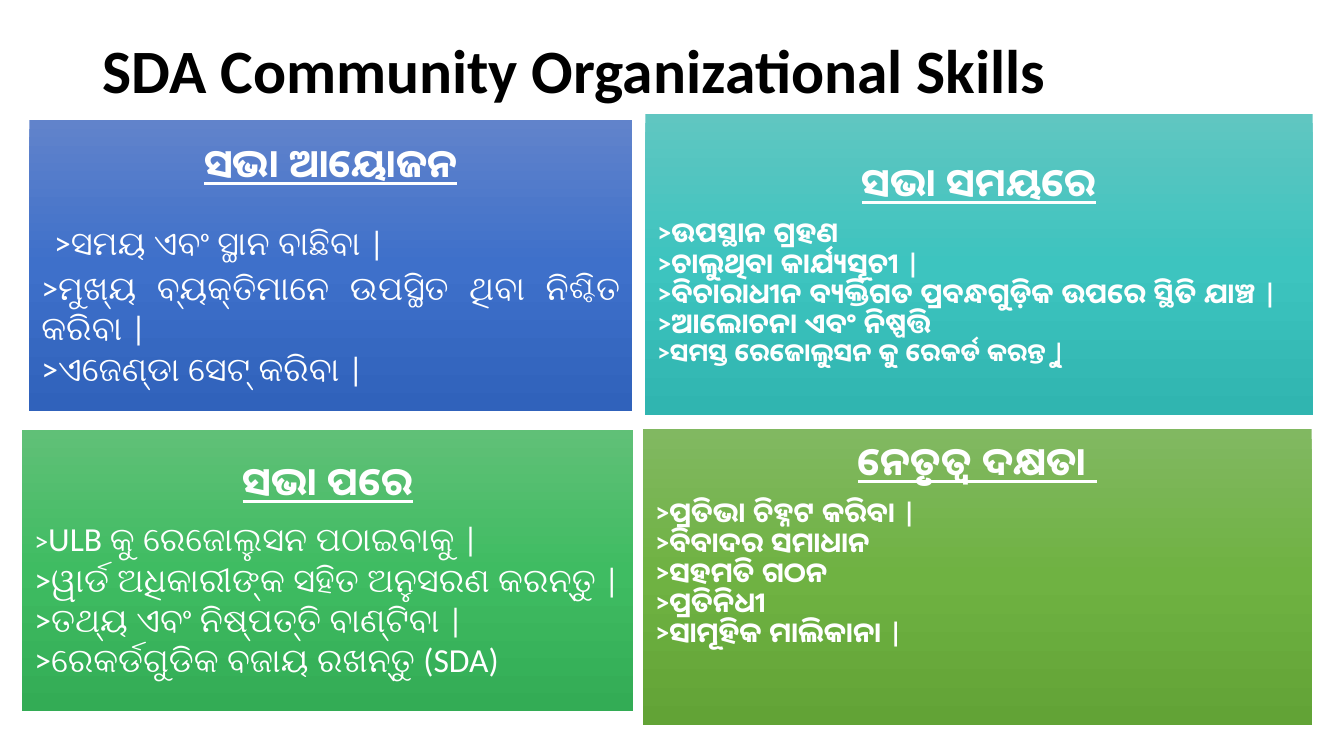
import copy

import pptx
import pptx.dml.color
import pptx.enum.shapes
import pptx.enum.text
import pptx.util

Inches = pptx.util.Inches
Pt = pptx.util.Pt
ALIGN = pptx.enum.text.PP_ALIGN
ANCHOR = pptx.enum.text.MSO_ANCHOR


def rgb(hex_colour):
    return pptx.dml.color.RGBColor.from_string(hex_colour)


def add_text(paragraph, text, size=24, colour="FFFFFF", bold=False, underline=False,
             align=ALIGN.LEFT, spacing=1.0, after=0):
    """Append a formatted run and set the format of its paragraph."""
    paragraph.alignment = align
    paragraph.line_spacing = spacing
    paragraph.space_before = Pt(0)
    paragraph.space_after = Pt(after)
    run = paragraph.add_run()
    run.text = text
    run.font.name = "Calibri"
    run.font.size = Pt(size)
    run.font.bold = bold
    run.font.underline = underline
    run.font.color.rgb = rgb(colour)


deck = pptx.Presentation()
deck.slide_width, deck.slide_height = Inches(13.33), Inches(7.5)
slide = deck.slides.add_slide(deck.slide_layouts[5])

title = slide.shapes.title
title.left, title.top, title.width, title.height = map(Inches, (0.92, 0, 11.5, 1.45))
title.text_frame.auto_size = pptx.enum.text.MSO_AUTO_SIZE.NONE
title.text_frame.vertical_anchor = ANCHOR.MIDDLE
add_text(title.text_frame.paragraphs[0], "SDA Community Organizational Skills",
         size=44, colour="000000", bold=True, spacing=0.9)

light = {"align": ALIGN.LEFT}
justified = {"align": ALIGN.JUSTIFY}
heavy = {"bold": True, "spacing": 0.9}

# Box, gradient, anchor, heading, body format, body lines as (text, size) runs
panels = [
    ((0.29, 1.19, 5.98, 2.89), ("6183CB", "3E70CA", "3062BB"), ANCHOR.MIDDLE,
     "ସଭା ଆୟୋଜନ", justified, [
         [(" ", 40), (">ସମୟ ଏବଂ ସ୍ଥାନ ବାଛିବା |", 24)],
         [(">ମୁଖ୍ୟ ବ୍ୟକ୍ତିମାନେ ଉପସ୍ଥିତ ଥିବା ନିଶ୍ଚିତ କରିବା |", 24)],
         [(">ଏଜେଣ୍ଡା ସେଟ୍ କରିବା |", 24)]]),
    ((6.4, 1.13, 6.62, 2.99), ("60C6C1", "3DC4BF", "30B5B0"), ANCHOR.MIDDLE,
     "ସଭା ସମୟରେ", heavy, [
         [(">ଉପସ୍ଥାନ ଗ୍ରହଣ", 20)],
         [(">ଚାଲୁଥିବା କାର୍ଯ୍ୟସୂଚୀ |", 20)],
         [(">ବିଚାରାଧୀନ ବ୍ୟକ୍ତିଗତ ପ୍ରବନ୍ଧଗୁଡ଼ିକ ଉପରେ ସ୍ଥିତି ଯାଞ୍ଚ |", 20)],
         [(">ଆଲୋଚନା ଏବଂ ନିଷ୍ପତ୍ତି", 20)],
         [(">ସମସ୍ତ ରେଜୋଲୁସନ କୁ ରେକର୍ଡ କରନ୍ତୁ |", 18)]]),
    ((0.22, 4.27, 6.06, 2.78), ("60C077", "3FBC62", "33AC55"), ANCHOR.MIDDLE,
     "ସଭା ପରେ", light, [
         [(">", 20), ("ULB କୁ ରେଜୋଲୁସନ ପଠାଇବାକୁ |", 24)],
         [(">ୱାର୍ଡ ଅଧିକାରୀଙ୍କ ସହିତ ଅନୁସରଣ କରନ୍ତୁ |", 24)],
         [(">ତଥ୍ୟ ଏବଂ ନିଷ୍ପତ୍ତି ବାଣ୍ଟିବା |", 24)],
         [(">ରେକର୍ଡଗୁଡିକ ବଜାୟ ରଖନ୍ତୁ (SDA)", 24)]]),
    ((6.38, 4.26, 6.63, 2.93), ("81B861", "6FB242", "62A336"), ANCHOR.TOP,
     "ନେତୃତ୍ୱ ଦକ୍ଷତା ", heavy, [
         [(">ପ୍ରତିଭା ଚିହ୍ନଟ କରିବା |", 20)],
         [(">ବିବାଦର ସମାଧାନ", 20)],
         [(">ସହମତି ଗଠନ", 20)],
         [(">ପ୍ରତିନିଧୀ", 20)],
         [(">ସାମୂହିକ ମାଲିକାନା |", 20)]]),
]

for box, gradient, anchor, heading, body_format, lines in panels:
    panel = slide.shapes.add_shape(pptx.enum.shapes.MSO_SHAPE.RECTANGLE, *map(Inches, box))
    panel.shadow.inherit = False
    panel.line.fill.background()

    panel.fill.gradient()
    panel.fill.gradient_angle = 270
    first_stop = panel.fill._fill._gradFill.gsLst[0]
    first_stop.addnext(copy.deepcopy(first_stop))
    for stop, colour, position in zip(panel.fill.gradient_stops, gradient, (0, 0.5, 1)):
        stop.color.rgb = rgb(colour)
        stop.position = position

    frame = panel.text_frame
    frame.word_wrap = True
    frame.vertical_anchor = anchor
    frame.margin_left = frame.margin_right = Inches(0.12)
    frame.margin_top = frame.margin_bottom = Inches(0.12)
    add_text(frame.paragraphs[0], heading, size=28, bold=True, underline=True,
             align=ALIGN.CENTER, spacing=0.9, after=10)
    for line in lines:
        paragraph = frame.add_paragraph()
        for text, size in line:
            add_text(paragraph, text, size=size, **body_format)

deck.save("out.pptx")
